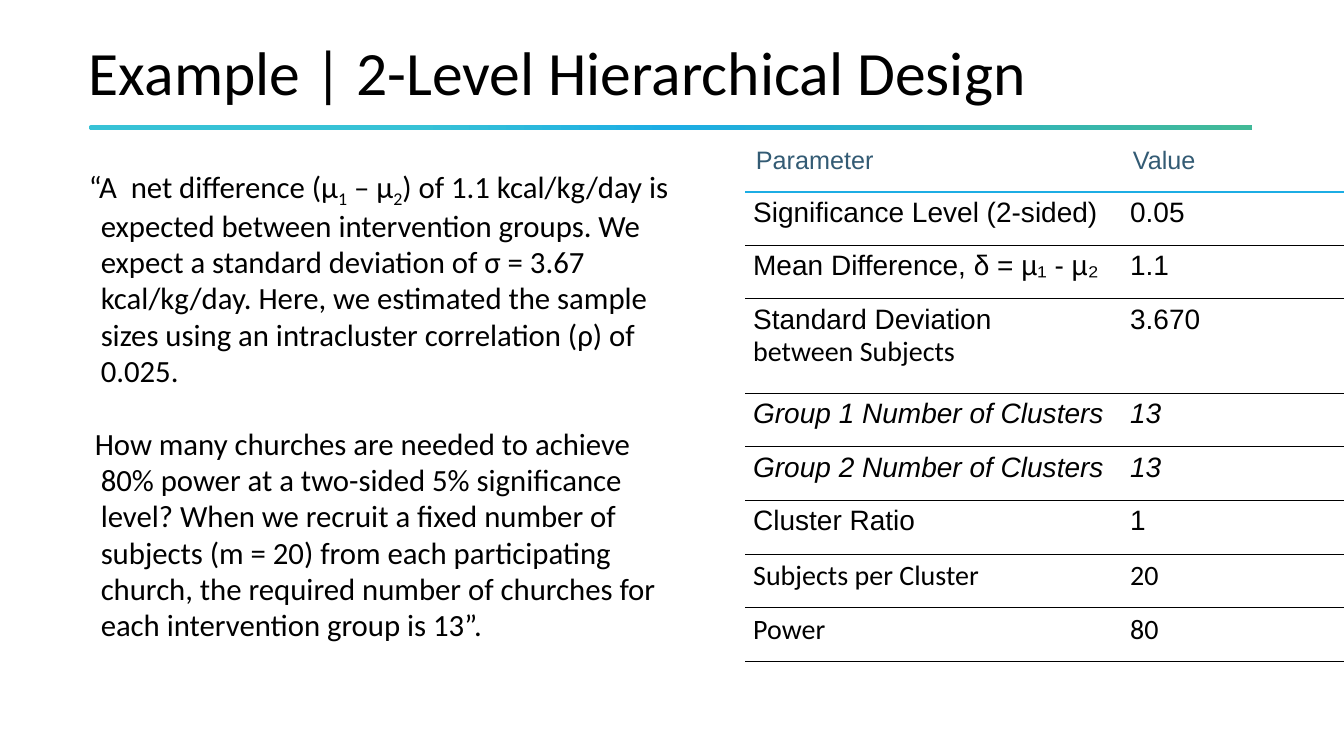
from dataclasses import dataclass

import lxml.etree
import pptx
import pptx.dml.color
import pptx.enum.shapes
import pptx.enum.text
import pptx.oxml.ns
import pptx.shapes.autoshape
import pptx.slide
import pptx.table
import pptx.text.text
import pptx.util
from pptx.util import Cm

qn = pptx.oxml.ns.qn


@dataclass(frozen=True)
class Theme:
    heading_font: str = "Calibri"
    table_font: str = "Arial"
    black: str = "000000"
    white: str = "FFFFFF"
    slate: str = "335B74"
    blue: str = "1CADE4"
    rule_stops: tuple[tuple[int, str], ...] = (
        (0, "37C2D6"), (28, "37C2D6"), (50, "1CADE4"), (100, "42BA97"))
    title_size: int = 44
    body_size: int = 22
    header_size: int = 18
    cell_size: int = 20


THEME = Theme()


@dataclass(frozen=True)
class Run:
    text: str
    subscript: bool = False


@dataclass(frozen=True)
class BodyParagraph:
    runs: tuple[Run, ...]
    first_line: float  # cm, relative to the hanging indent
    space_before: float = 0


@dataclass(frozen=True)
class ParameterRow:
    label: tuple[str, ...]
    value: str
    height: float = 1.35
    italic: bool = False
    label_fonts: tuple[str, ...] = (THEME.table_font,)
    value_font: str = THEME.table_font


MARGIN_LEFT, CONTENT_WIDTH = 2.24, 29.31
HANGING = 0.3

BODY = (
    BodyParagraph((
        Run("“A  net difference (μ"), Run("1", True), Run(" – μ"), Run("2", True),
        Run(") of 1.1 kcal/kg/day is expected between intervention groups. "
            "We expect a standard deviation of σ = 3.67 kcal/kg/day. Here, we "
            "estimated the sample sizes using an intracluster correlation (ρ) "
            "of 0.025.")), -HANGING),
    BodyParagraph((
        Run("How many churches are needed to achieve 80% power at a two-sided "
            "5% significance level? When we recruit a fixed number of subjects "
            "(m = 20) from each participating church, the required number of "
            "churches for each intervention group is 13”."),), -HANGING / 2, 26.4),
)

CALIBRI = THEME.heading_font
PARAMETERS = (
    ParameterRow(("Parameter",), "Value", height=1.27),
    ParameterRow(("Significance Level (2-sided)",), "0.05"),
    ParameterRow(("Mean Difference, δ = µ₁ - µ₂",), "1.1"),
    ParameterRow(("Standard Deviation", "between Subjects"), "3.670", height=2.38,
                 label_fonts=(THEME.table_font, CALIBRI)),
    ParameterRow(("Group 1 Number of Clusters",), "13", italic=True),
    ParameterRow(("Group 2 Number of Clusters",), "13", italic=True),
    ParameterRow(("Cluster Ratio",), "1"),
    ParameterRow(("Subjects per Cluster",), "20", label_fonts=(CALIBRI,), value_font=CALIBRI),
    ParameterRow(("Power",), "80", label_fonts=(CALIBRI,), value_font=CALIBRI),
)
COLUMN_WIDTHS = (9.5, 5.59)


def set_font(paragraph: pptx.text.text._Paragraph, name: str, size: int,
             color: str, italic: bool = False) -> None:
    font = paragraph.font
    font.name, font.size = name, pptx.util.Pt(size)
    font.bold, font.italic = False, italic
    font.color.rgb = pptx.dml.color.RGBColor.from_string(color)


def add_text_frame(slide: pptx.slide.Slide, top: float, width: float,
                   height: float) -> pptx.text.text.TextFrame:
    frame = slide.shapes.add_textbox(
        Cm(MARGIN_LEFT), Cm(top), Cm(width), Cm(height)).text_frame
    frame.word_wrap = True
    frame.margin_left = frame.margin_right = frame.margin_top = frame.margin_bottom = 0
    return frame


def add_title(slide: pptx.slide.Slide) -> None:
    frame = add_text_frame(slide, 0.61, CONTENT_WIDTH, 2.13)
    frame.vertical_anchor = pptx.enum.text.MSO_ANCHOR.BOTTOM
    title = frame.paragraphs[0]
    title.text = "Example | 2-Level Hierarchical Design"
    title.line_spacing = 0.9
    set_font(title, THEME.heading_font, THEME.title_size, THEME.black)


def add_title_rule(slide: pptx.slide.Slide) -> None:
    rule = slide.shapes.add_shape(
        pptx.enum.shapes.MSO_SHAPE.ROUNDED_RECTANGLE,
        Cm(MARGIN_LEFT), Cm(3.15), Cm(CONTENT_WIDTH), Cm(0.13))
    rule.adjustments[0] = 0.5
    rule.shadow.inherit = False
    rule.line.fill.background()
    rule.fill.gradient()
    rule.fill.gradient_angle = 0
    stops = rule._element.spPr.find(".//" + qn("a:gsLst"))
    for stop in list(stops):
        stops.remove(stop)
    for position, color in THEME.rule_stops:
        stop = lxml.etree.SubElement(stops, qn("a:gs"), pos=str(position * 1000))
        lxml.etree.SubElement(stop, qn("a:srgbClr"), val=color)


def add_body(slide: pptx.slide.Slide) -> None:
    frame = add_text_frame(slide, 4.22, 14.71, 13.77)
    for index, content in enumerate(BODY):
        paragraph = frame.add_paragraph() if index else frame.paragraphs[0]
        indents = paragraph._p.get_or_add_pPr()
        indents.set("marL", str(Cm(HANGING)))
        indents.set("indent", str(Cm(content.first_line)))
        paragraph.line_spacing = 0.98
        if content.space_before:
            paragraph.space_before = pptx.util.Pt(content.space_before)
        set_font(paragraph, THEME.heading_font, THEME.body_size, THEME.black)
        for part in content.runs:
            run = paragraph.add_run()
            run.text = part.text
            if part.subscript:
                run.font._element.set("baseline", "-25000")


def add_border(cell: pptx.table._Cell, side: str, color: str, points: float) -> None:
    border = lxml.etree.SubElement(
        cell._tc.get_or_add_tcPr(), qn(f"a:ln{side}"), w=str(pptx.util.Pt(points)))
    fill = lxml.etree.SubElement(border, qn("a:solidFill"))
    lxml.etree.SubElement(fill, qn("a:srgbClr"), val=color)


def fill_cell(cell: pptx.table._Cell, lines: tuple[str, ...],
              fonts: tuple[str, ...], row_index: int, italic: bool) -> None:
    header_edge, row_edge = (THEME.blue, 1.5), (THEME.black, 0.75)
    edges = ((THEME.white, 1), header_edge) + (row_edge,) * len(PARAMETERS)
    add_border(cell, "L", THEME.white, 1)
    add_border(cell, "R", THEME.white, 1)
    add_border(cell, "T", *edges[row_index])
    add_border(cell, "B", *edges[row_index + 1])
    cell.fill.solid()
    cell.fill.fore_color.rgb = pptx.dml.color.RGBColor.from_string(THEME.white)

    is_header = row_index == 0
    cell.margin_left = cell.margin_right = Cm(0.25 if is_header else 0.18)
    cell.margin_top = cell.margin_bottom = Cm(0.13)
    size = THEME.header_size if is_header else THEME.cell_size
    color = THEME.slate if is_header else THEME.black
    cell.text_frame.text = "\n".join(lines)
    for paragraph, font in zip(cell.text_frame.paragraphs, fonts):
        set_font(paragraph, font, size, color, italic)


def add_parameter_table(slide: pptx.slide.Slide) -> None:
    parameters = slide.shapes.add_table(
        len(PARAMETERS), len(COLUMN_WIDTHS), Cm(18.8), Cm(3.56),
        Cm(sum(COLUMN_WIDTHS)), Cm(sum(row.height for row in PARAMETERS))).table
    parameters.first_row = parameters.horz_banding = False
    for column, width in zip(parameters.columns, COLUMN_WIDTHS):
        column.width = Cm(width)
    for index, row in enumerate(PARAMETERS):
        parameters.rows[index].height = Cm(row.height)
        fill_cell(parameters.cell(index, 0), row.label, row.label_fonts, index, row.italic)
        fill_cell(parameters.cell(index, 1), (row.value,), (row.value_font,), index, row.italic)


def main() -> None:
    deck = pptx.Presentation()
    deck.slide_width, deck.slide_height = Cm(33.87), Cm(19.05)
    slide = deck.slides.add_slide(deck.slide_layouts[6])
    # Heading
    add_title_rule(slide)
    add_title(slide)
    # Study question and its parameters
    add_body(slide)
    add_parameter_table(slide)
    deck.save("out.pptx")


if __name__ == "__main__":
    main()
